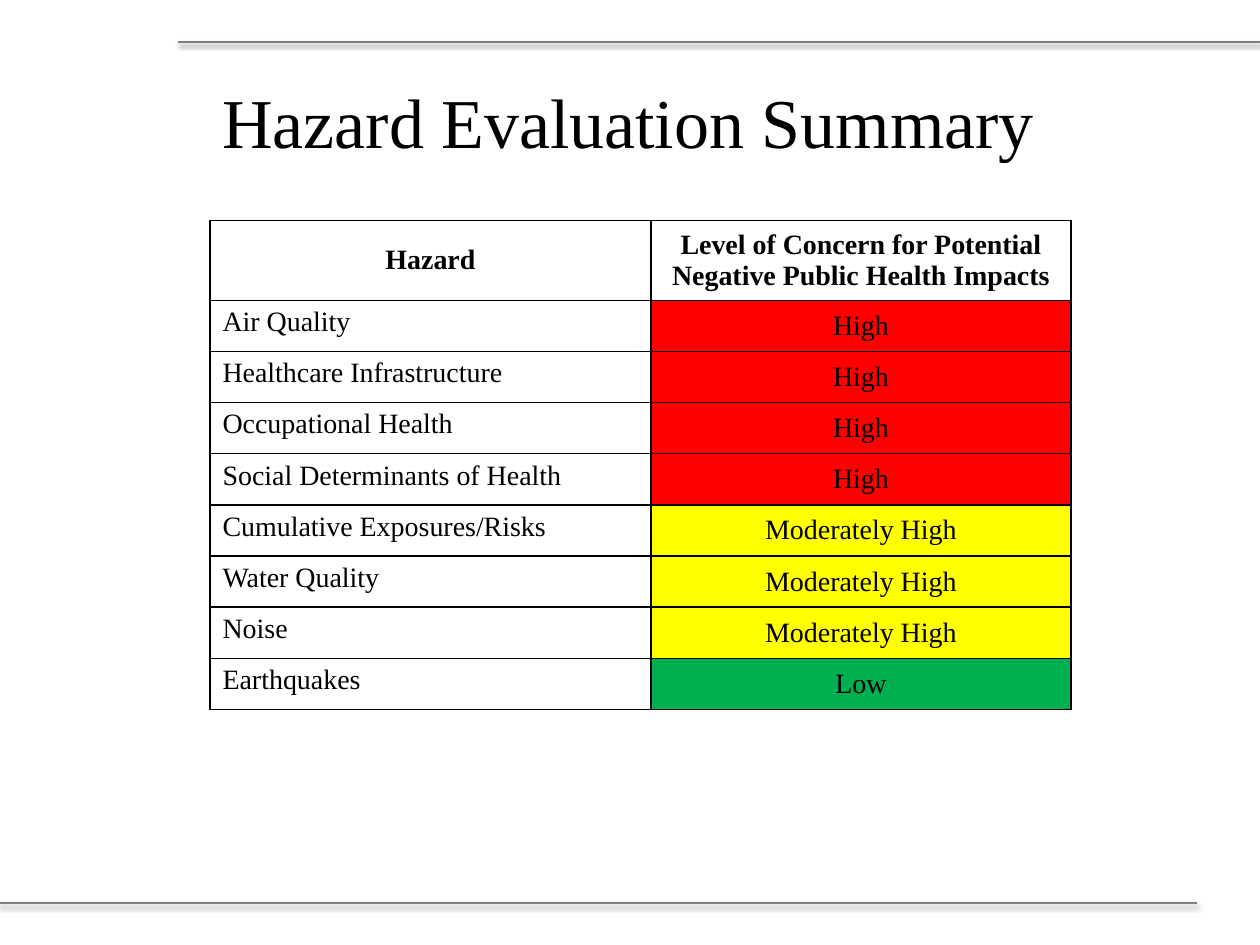
from dataclasses import dataclass

from lxml.etree import SubElement
from pptx import Presentation
from pptx.dml.color import RGBColor as Color
from pptx.enum.shapes import MSO_CONNECTOR as Connector
from pptx.enum.text import MSO_ANCHOR as Anchor, PP_ALIGN as Align
from pptx.oxml import parse_xml
from pptx.oxml.ns import nsdecls, qn
from pptx.util import Pt


@dataclass(frozen=True)
class Theme:
    font: str = "Times New Roman"
    title_size: int = 40
    table_size: int = 16
    text: str = "000000"
    rule: str = "808080"
    high: str = "FF0000"
    moderate: str = "FFFF00"
    low: str = "00B050"


THEME = Theme()
LEVEL_COLORS = {
    "High": THEME.high,
    "Moderately High": THEME.moderate,
    "Low": THEME.low,
}
HEADINGS = ("Hazard", "Level of Concern for Potential Negative Public Health Impacts")
HAZARDS = [
    ("Air Quality", "High"),
    ("Healthcare Infrastructure", "High"),
    ("Occupational Health", "High"),
    ("Social Determinants of Health", "High"),
    ("Cumulative Exposures/Risks", "Moderately High"),
    ("Water Quality", "Moderately High"),
    ("Noise", "Moderately High"),
    ("Earthquakes", "Low"),
]
COLUMN_WIDTHS = (252, 240)
HEADER_HEIGHT = 42.75
ROW_HEIGHT = 29.25


def style(para, size, bold=False, align=Align.LEFT):
    para.alignment = align
    para.font.name = THEME.font
    para.font.size = Pt(size)
    para.font.bold = bold
    para.font.color.rgb = Color.from_string(THEME.text)


def add_rule(page, left, right, top):
    rule = page.shapes.add_connector(
        Connector.STRAIGHT, Pt(left), Pt(top), Pt(right), Pt(top)
    )
    rule.line.color.rgb = Color.from_string(THEME.rule)
    rule.line.width = Pt(1)
    rule._element.spPr.append(parse_xml(
        f'<a:effectLst {nsdecls("a")}>'
        f'<a:outerShdw blurRad="{Pt(3.1)}" dist="{Pt(1.6)}" dir="5400000" rotWithShape="0">'
        f'<a:srgbClr val="{THEME.text}"><a:alpha val="38000"/></a:srgbClr>'
        '</a:outerShdw></a:effectLst>'
    ))


def add_title(page, text):
    box = page.shapes.add_textbox(Pt(120), Pt(24), Pt(564), Pt(90))
    frame = box.text_frame
    frame.word_wrap = True
    frame.vertical_anchor = Anchor.MIDDLE
    para = frame.paragraphs[0]
    para.text = text
    style(para, THEME.title_size)


def add_borders(cell):
    properties = cell._tc.get_or_add_tcPr()
    for side in ("lnL", "lnR", "lnT", "lnB"):
        border = SubElement(properties, qn(f"a:{side}"), w=str(Pt(1)))
        fill = SubElement(border, qn("a:solidFill"))
        SubElement(fill, qn("a:srgbClr"), val=THEME.text)


def fill_cell(cell, text, bold=False, centered=True, color=None):
    add_borders(cell)
    if color:
        cell.fill.solid()
        cell.fill.fore_color.rgb = Color.from_string(color)
    else:
        cell.fill.background()
    cell.vertical_anchor = Anchor.MIDDLE if centered else Anchor.TOP
    para = cell.text_frame.paragraphs[0]
    para.text = text
    style(para, THEME.table_size, bold, Align.CENTER if centered else Align.LEFT)


def add_hazard_table(page):
    heights = [HEADER_HEIGHT] + [ROW_HEIGHT] * len(HAZARDS)
    table = page.shapes.add_table(
        len(heights), len(COLUMN_WIDTHS),
        Pt(120), Pt(126), Pt(sum(COLUMN_WIDTHS)), Pt(sum(heights)),
    ).table
    for column, width in zip(table.columns, COLUMN_WIDTHS):
        column.width = Pt(width)
    for row, height in zip(table.rows, heights):
        row.height = Pt(height)
    for index, heading in enumerate(HEADINGS):
        fill_cell(table.cell(0, index), heading, bold=True)
    for index, (hazard, level) in enumerate(HAZARDS, start=1):
        fill_cell(table.cell(index, 0), hazard, centered=False)
        fill_cell(table.cell(index, 1), level, color=LEVEL_COLORS[level])


def main():
    deck = Presentation()
    deck.slide_width, deck.slide_height = Pt(720), Pt(540)
    page = deck.slides.add_slide(deck.slide_layouts[6])
    add_rule(page, 102, 720, 24)
    add_rule(page, 0, 684, 516)
    add_title(page, "Hazard Evaluation Summary")
    add_hazard_table(page)
    deck.save("out.pptx")


if __name__ == "__main__":
    main()
